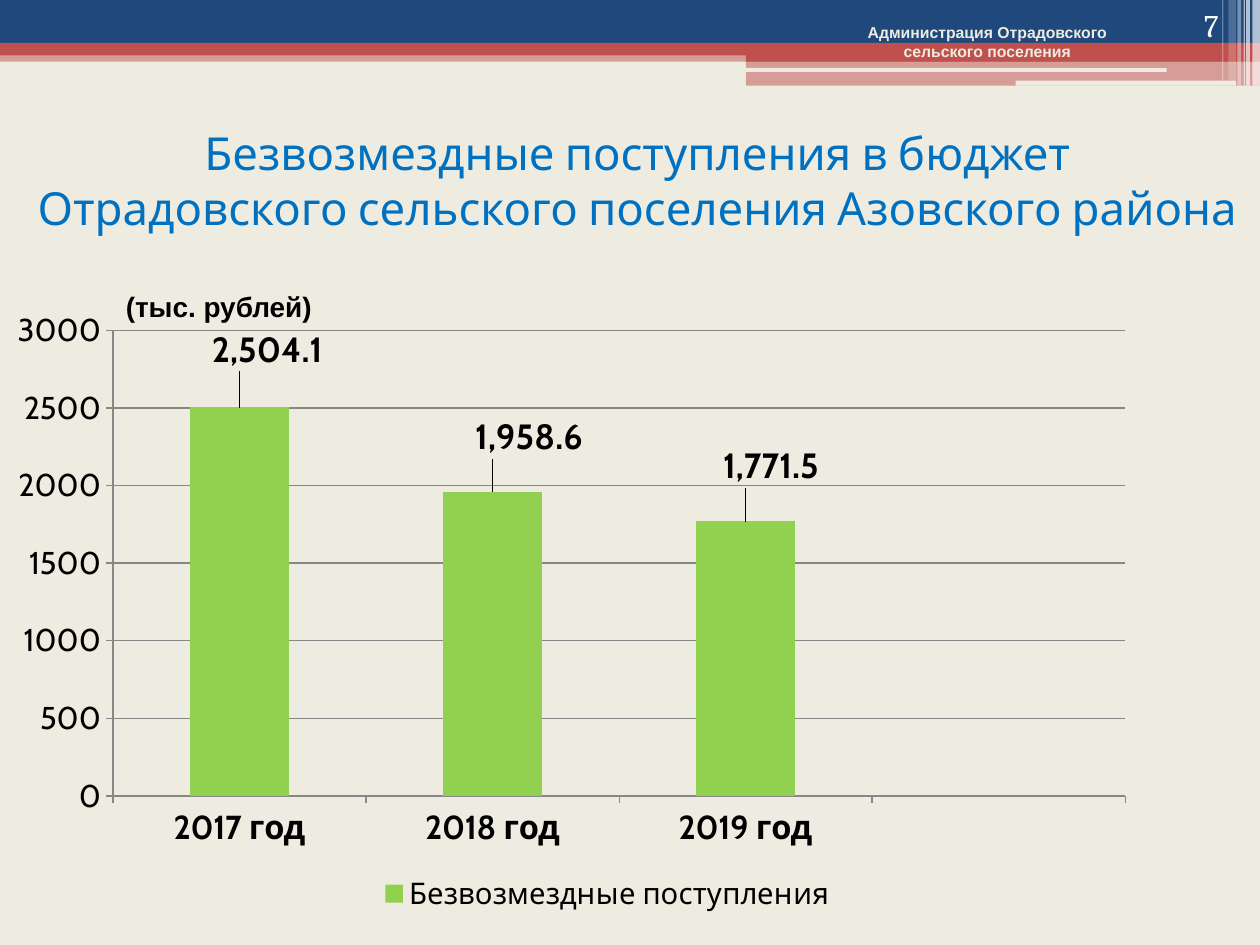
from lxml.etree import SubElement
from pptx import Presentation
from pptx.chart.data import CategoryChartData
from pptx.dml.color import RGBColor
from pptx.enum.chart import XL_CHART_TYPE, XL_LABEL_POSITION, XL_LEGEND_POSITION, XL_TICK_MARK
from pptx.enum.shapes import MSO_SHAPE
from pptx.enum.text import MSO_ANCHOR, PP_ALIGN
from pptx.oxml import parse_xml
from pptx.oxml.ns import nsdecls, qn
from pptx.util import Inches, Pt

HUES = {"paper": "EEECE1", "navy": "1F497D", "red": "C0504D", "white": "FFFFFF",
        "blue": "0070C0", "green": "92D050", "grey": "878787", "black": "000000"}

BANDS = [
    ((0, 0.4, 10, 0.09), "red", 50),
    ((0, 0, 10, 0.34), "navy", 100),
    ((0, 0.34, 10, 0.1), "red", 100),
    ((5.92, 0.39, 4.08, 0.1), "red", 100),
    ((5.92, 0.48, 4.08, 0.2), "red", 50),
    ((5.91, 0.54, 3.35, 0.03), "paper", 100),
    ((8.06, 0.64, 1.75, 0.04), "paper", 100),
]
STRIPES = [
    (9.94, 0.06, 0.68, 65), (9.89, 0.03, 0.68, 65), (9.87, 0.01, 0.68, 60),
    (9.82, 0.03, 0.68, 40), (9.75, 0.06, 0.64, 20), (9.7, 0.01, 0.64, 30),
]
BANDS += [((x, 0, w, h), "white", a) for x, w, h, a in STRIPES]

TITLE = "Безвозмездные поступления в бюджет\vОтрадовского сельского поселения Азовского района"
NOTES = [
    ((0.9, 2.25, 1.81, 0.37), ["(тыс. рублей)"], PP_ALIGN.LEFT, MSO_ANCHOR.TOP,
     {"size": 16, "name": "Arial", "bold": True, "color": "black"}),
    ((6.28, 0.13, 3.11, 0.4), ["Администрация Отрадовского", "сельского поселения"],
     PP_ALIGN.CENTER, MSO_ANCHOR.TOP,
     {"size": 9, "name": "Arial", "bold": True, "color": "paper"}),
    ((8.94, 0, 0.83, 0.4), ["7"], PP_ALIGN.RIGHT, MSO_ANCHOR.BOTTOM,
     {"size": 18, "name": "Cambria", "bold": False, "color": "white"}),
]
YEARS = ["2017 год", "2018 год", "2019 год", ""]
SUMS = [2504.1, 1958.6, 1771.5, None]
SHIFTS = [(0.025, -0.05), (0.033, -0.045), (0.023, -0.045)]
LABEL = {"size": 20, "name": "Cabin", "bold": True, "color": "black"}


def tint(name):
    return RGBColor.from_string(HUES[name])


def style(font, form):
    for key, val in form.items():
        if key == "color":
            font.color.rgb = tint(val)
        else:
            setattr(font, key, Pt(val) if key == "size" else val)


def place(shape, box):
    for key, val in zip(("left", "top", "width", "height"), box):
        setattr(shape, key, Inches(val))


def layout(**parts):
    tags = "".join(f'<c:{key} val="{val}"/>' for key, val in parts.items())
    return parse_xml(f'<c:layout {nsdecls("c")}><c:manualLayout>{tags}</c:manualLayout></c:layout>')


def add_band(slide, box, hue, alpha):
    kind = MSO_SHAPE.ROUNDED_RECTANGLE if hue == "paper" else MSO_SHAPE.RECTANGLE
    band = slide.shapes.add_shape(kind, *map(Inches, box))
    band.shadow.inherit = False
    band.line.fill.background()
    band.fill.solid()
    band.fill.fore_color.rgb = tint(hue)
    if alpha < 100:
        clr = band._element.spPr.find(".//" + qn("a:srgbClr"))
        SubElement(clr, qn("a:alpha"), val=str(alpha * 1000))


def add_note(slide, box, lines, align, anchor, form):
    frame = slide.shapes.add_textbox(*map(Inches, box)).text_frame
    frame.word_wrap = True
    frame.vertical_anchor = anchor
    frame.text = "\n".join(lines)
    for para in frame.paragraphs:
        para.alignment = align
        style(para.runs[0].font, form)


def add_title(slide):
    title = slide.shapes.title
    place(title, (0.12, 0.84, 9.88, 1.17))
    frame = title.text_frame
    frame.text = TITLE
    frame.vertical_anchor = MSO_ANCHOR.MIDDLE
    para = frame.paragraphs[0]
    para.alignment = PP_ALIGN.CENTER
    for run in para.runs:
        style(run.font, {"size": 26, "name": "Cabin", "color": "blue"})


def add_bars(slide):
    data = CategoryChartData()
    data.categories = YEARS
    data.add_series("Безвозмездные поступления", SUMS)
    box = map(Inches, (0.14, 2.4, 8.94, 4.94))
    chart = slide.shapes.add_chart(XL_CHART_TYPE.COLUMN_CLUSTERED, *box, data).chart
    chart.has_title = False
    style(chart.font, {"size": 18, "name": "Cambria", "color": "black"})

    plot = chart.plots[0]
    plot.gap_width = 155
    plot.vary_by_categories = False
    area = chart._chartSpace.chart.plotArea
    for old in area.findall(qn("c:layout")):
        area.remove(old)
    area.insert(0, layout(layoutTarget="inner", xMode="edge", yMode="edge",
                          x=0.068, y=0.045, w=0.915, h=0.748))

    cat, val = chart.category_axis, chart.value_axis
    for axis, size, bold in ((cat, 19, True), (val, 18, False)):
        style(axis.tick_labels.font,
              {"size": size, "name": "Cabin", "bold": bold, "color": "black"})
        axis.major_tick_mark = XL_TICK_MARK.OUTSIDE
        axis.format.line.color.rgb = tint("grey")
    val.minimum_scale, val.maximum_scale, val.major_unit = 0, 3000, 500
    val.major_gridlines.format.line.color.rgb = tint("grey")

    row = plot.series[0]
    row.format.fill.solid()
    row.format.fill.fore_color.rgb = tint("green")
    tags = row.data_labels
    tags.show_value = True
    tags.number_format = "#,##0.0"
    tags.number_format_is_linked = False
    tags.position = XL_LABEL_POSITION.OUTSIDE_END
    style(tags.font, LABEL)
    for i in range(len(SHIFTS)):
        tag = row.points[i].data_label
        style(tag.font, LABEL)
        tag.position = XL_LABEL_POSITION.OUTSIDE_END
    for node, (x, y) in zip(row._element.iter(qn("c:dLbl")), SHIFTS):
        node.insert(1, layout(x=x, y=y))
        node.insert(2, parse_xml(
            f'<c:numFmt {nsdecls("c")} formatCode="#,##0.0" sourceLinked="0"/>'))

    chart.has_legend = True
    key = chart.legend
    key.position = XL_LEGEND_POSITION.RIGHT
    key.include_in_layout = False
    style(key.font, {"size": 17, "name": "Cabin", "color": "black"})
    for old in key._element.findall(qn("c:layout")):
        key._element.remove(old)
    key._element.insert(1, layout(xMode="edge", yMode="edge", x=0.3, y=0.91, w=0.43, h=0.08))


def main():
    deck = Presentation()
    deck.slide_width, deck.slide_height = Inches(10), Inches(7.5)
    slide = deck.slides.add_slide(deck.slide_layouts[5])
    slide.background.fill.solid()
    slide.background.fill.fore_color.rgb = tint("paper")
    for band in BANDS:
        add_band(slide, *band)
    add_title(slide)
    add_bars(slide)
    for note in NOTES:
        add_note(slide, *note)
    deck.save("out.pptx")


if __name__ == "__main__":
    main()
